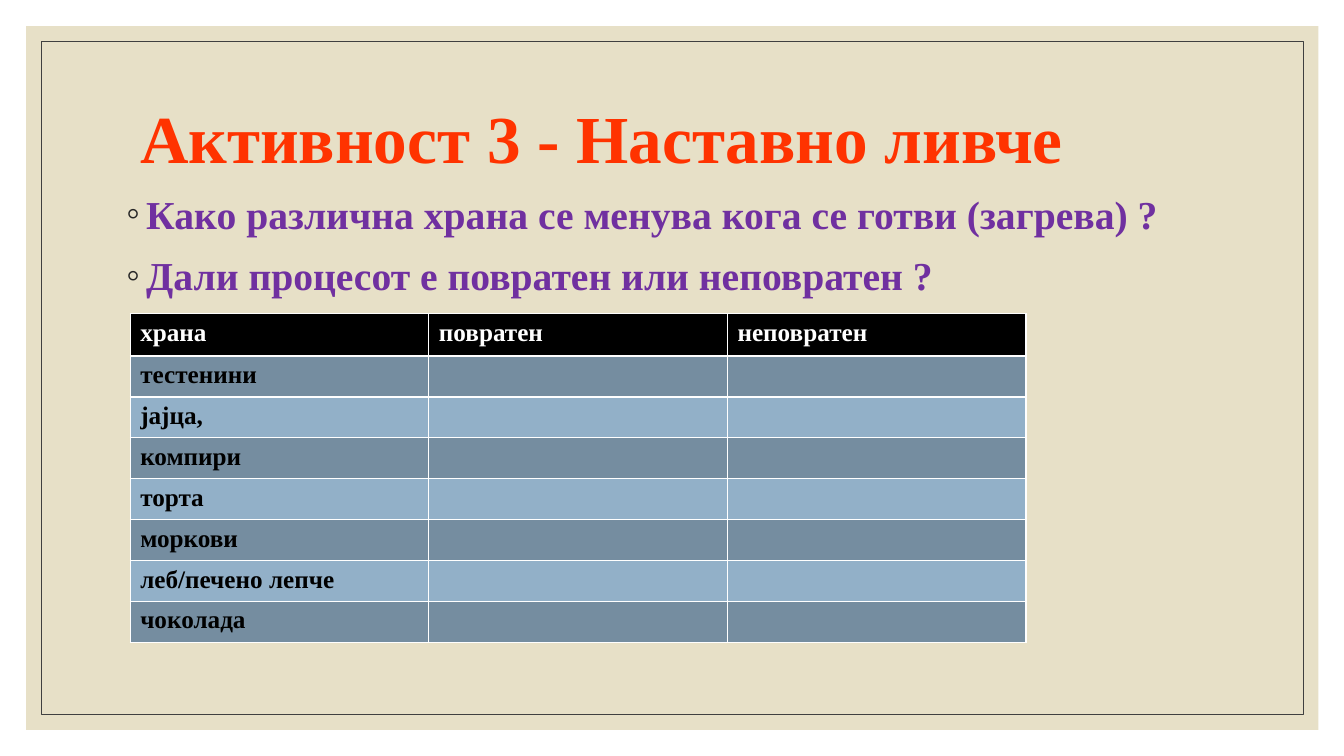
from lxml.etree import SubElement
from pptx import Presentation
from pptx.dml.color import RGBColor
from pptx.enum.shapes import MSO_SHAPE
from pptx.enum.text import MSO_ANCHOR
from pptx.oxml.ns import qn
from pptx.util import Pt

FONT = "Times New Roman"
COLORS = {
    "panel": "E7E0C7",
    "frame": "404040",
    "title": "FF3300",
    "question": "7030A0",
    "bullet": "262626",
    "header": "000000",
    "header_text": "FFFFFF",
    "food_text": "000000",
    "dark_band": "758DA0",
    "light_band": "92B0C8",
}
QUESTIONS = [
    "Како различна храна се менува кога се готви (загрева) ?",
    "Дали процесот е повратен или неповратен ?",
]
HEADINGS = ["храна", "повратен", "неповратен"]
FOODS = ["тестенини", "јајца,", "компири", "торта", "моркови", "леб/печено лепче", "чоколада"]


def color(name):
    """Return the named colour."""
    return RGBColor.from_string(COLORS[name])


def style(paragraph, size, color_name):
    """Set the bold font of a paragraph."""
    font = paragraph.font
    font.name, font.size, font.bold = FONT, Pt(size), True
    font.color.rgb = color(color_name)


def add_rectangle(slide, left, top, width, height, fill=None, line=None):
    """Add a rectangle with an optional fill and outline."""
    shape = slide.shapes.add_shape(
        MSO_SHAPE.RECTANGLE, Pt(left), Pt(top), Pt(width), Pt(height)
    )
    shape.shadow.inherit = False
    if fill:
        shape.fill.solid()
        shape.fill.fore_color.rgb = color(fill)
    else:
        shape.fill.background()
    if line:
        shape.line.color.rgb = color(line)
        shape.line.width = Pt(0.5)
    else:
        shape.line.fill.background()


def add_text_frame(slide, left, top, width, height, anchor):
    """Add a wrapping text box and return its text frame."""
    frame = slide.shapes.add_textbox(Pt(left), Pt(top), Pt(width), Pt(height)).text_frame
    frame.word_wrap = True
    frame.vertical_anchor = anchor
    return frame


def add_title(slide, text):
    """Add the slide title."""
    paragraph = add_text_frame(slide, 93, 47, 792, 108, MSO_ANCHOR.MIDDLE).paragraphs[0]
    paragraph.text = text
    paragraph.line_spacing = 0.9
    style(paragraph, 48, "title")


def add_bullet(paragraph):
    """Give a paragraph a hanging ring bullet."""
    properties = paragraph._p.get_or_add_pPr()
    properties.set("marL", str(Pt(14.4)))
    properties.set("indent", str(-Pt(14.4)))
    bullet_color = SubElement(properties, qn("a:buClr"))
    SubElement(bullet_color, qn("a:srgbClr"), val=COLORS["bullet"])
    SubElement(properties, qn("a:buFont"), typeface=FONT)
    SubElement(properties, qn("a:buChar"), char="◦")


def add_questions(slide, questions):
    """Add the bulleted questions."""
    frame = add_text_frame(slide, 83, 132, 792, 310, MSO_ANCHOR.TOP)
    frame.text = "\n".join(questions)
    for paragraph in frame.paragraphs:
        paragraph.space_before = Pt(10)
        style(paragraph, 28.3, "question")
        add_bullet(paragraph)


def add_bottom_border(cell, color_name):
    """Draw a line under a table cell."""
    properties = cell._tc.get_or_add_tcPr()
    border = properties.makeelement(qn("a:lnB"), {"w": str(Pt(2))})
    fill = SubElement(border, qn("a:solidFill"))
    SubElement(fill, qn("a:srgbClr"), val=COLORS[color_name])
    properties.insert(0, border)


def add_food_table(slide, headings, foods):
    """Add the banded table of foods."""
    rows = [headings] + [[food, "", ""] for food in foods]
    table = slide.shapes.add_table(
        len(rows), len(headings), Pt(93), Pt(224), Pt(640), Pt(234.8)
    ).table
    for column in table.columns:
        column.width = Pt(213.33)
    for index, texts in enumerate(rows):
        is_header = index == 0
        table.rows[index].height = Pt(30.4 if is_header else 29.2)
        band = "header" if is_header else ("light_band", "dark_band")[index % 2]
        for cell, text in zip(table.rows[index].cells, texts):
            cell.text = text
            style(cell.text_frame.paragraphs[0], 18, "header_text" if is_header else "food_text")
            cell.fill.solid()
            cell.fill.fore_color.rgb = color(band)
            if is_header:
                add_bottom_border(cell, "header_text")


def main():
    """Build and save the activity slide."""
    presentation = Presentation()
    presentation.slide_width, presentation.slide_height = Pt(960), Pt(540)
    slide = presentation.slides.add_slide(presentation.slide_layouts[6])
    add_rectangle(slide, 18.7, 18.7, 923, 502.6, fill="panel")
    add_rectangle(slide, 29.5, 29.5, 901.4, 481, line="frame")
    add_title(slide, "Активност 3 - Наставно ливче")
    add_questions(slide, QUESTIONS)
    add_food_table(slide, HEADINGS, FOODS)
    presentation.save("out.pptx")


if __name__ == "__main__":
    main()
